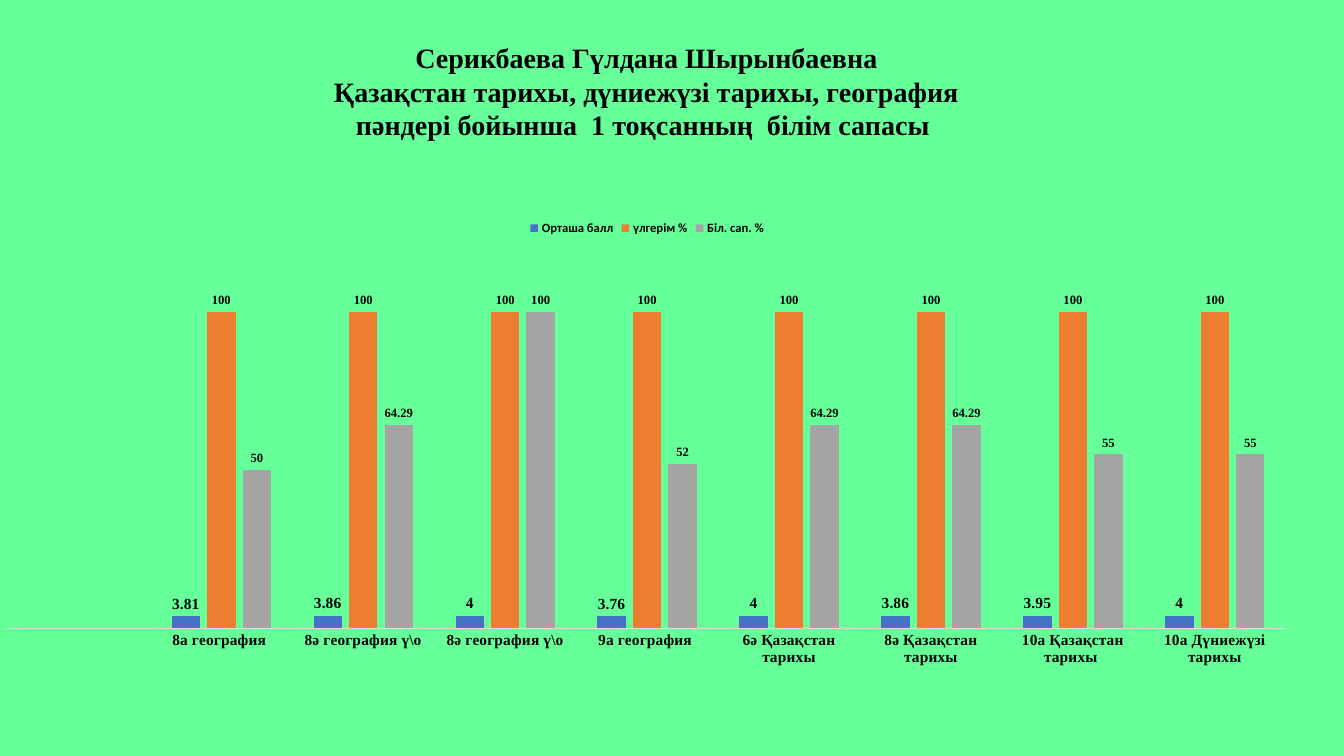
from pptx import Presentation
from pptx import util as u
from pptx.chart.data import CategoryChartData
from pptx.dml.color import RGBColor
from pptx.enum import chart as charts, text

CATEGORIES = ["", "8а география ", "8ә география ү\\о", "8ә география ү\\о",
              "9а география ", "6ә Қазақстан тарихы", "8ә Қазақстан тарихы",
              "10а Қазақстан тарихы ", "10а Дүниежүзі тарихы"]

# name, colour, label size, values
SERIES = [
    ("Орташа балл", "4472C4", 11,
     [None, 3.81, 3.86, 4, 3.76, 4, 3.86, 3.95, 4]),
    ("үлгерім %", "ED7D31", 9, [None] + [100] * 8),
    ("Біл. сап. %", "A5A5A5", 9,
     [None, 50, 64.29, 100, 52, 64.29, 64.29, 55, 55]),
]

TITLE = ["Серикбаева Гүлдана Шырынбаевна",
         "Қазақстан тарихы, дүниежүзі тарихы, география пәндері бойынша"
         "  1 тоқсанның  білім сапасы "]


def color(hex_value):
    return RGBColor.from_string(hex_value)


def apply(target, values):
    """Set each attribute named in the dict on the target."""
    for name, value in values.items():
        setattr(target, name, value)


class QualitySlide:
    INK = "000000"
    SERIF = "Times New Roman"
    SANS = "Calibri"

    def __init__(self, presentation, background):
        self.width = presentation.slide_width
        self.height = presentation.slide_height
        self.slide = presentation.slides.add_slide(presentation.slide_layouts[6])
        fill = self.slide.background.fill
        fill.solid()
        fill.fore_color.rgb = color(background)

    def box(self, left, top, width, height):
        """Turn shares of the slide's size into lengths."""
        return (int(left * self.width), int(top * self.height),
                int(width * self.width), int(height * self.height))

    def style(self, font, size, name=SERIF, bold=True):
        apply(font, {"size": u.Pt(size), "name": name, "bold": bold})
        font.color.rgb = color(self.INK)

    def title(self, lines, area, size):
        frame = self.slide.shapes.add_textbox(*self.box(*area)).text_frame
        apply(frame, {"word_wrap": True,
                      "auto_size": text.MSO_AUTO_SIZE.SHAPE_TO_FIT_TEXT})
        frame.text = "\n".join(lines)
        for paragraph in frame.paragraphs:
            paragraph.alignment = text.PP_ALIGN.CENTER
            self.style(paragraph.runs[0].font, size)

    def column_chart(self, categories, series_rows, area):
        data = CategoryChartData()
        data.categories = categories
        for name, _, _, values in series_rows:
            data.add_series(name, values)
        chart = self.slide.shapes.add_chart(
            charts.XL_CHART_TYPE.COLUMN_CLUSTERED, *self.box(*area), data).chart
        apply(chart, {"has_title": False, "has_legend": True})
        self.style(chart.font, 10, self.SANS, bold=False)
        apply(chart.legend, {"position": charts.XL_LEGEND_POSITION.TOP,
                             "include_in_layout": False})
        self.style(chart.legend.font, 9, self.SANS)
        self.axes(chart)

        plot = chart.plots[0]
        apply(plot, {"gap_width": 150, "overlap": -25,
                     "vary_by_categories": False})
        for series, (_, fill_color, label_size, _) in zip(plot.series, series_rows):
            series.format.fill.solid()
            series.format.fill.fore_color.rgb = color(fill_color)
            labels = series.data_labels
            apply(labels, {"show_value": True,
                           "position": charts.XL_LABEL_POSITION.OUTSIDE_END})
            self.style(labels.font, label_size)

    def axes(self, chart):
        apply(chart.value_axis, {"visible": False, "has_major_gridlines": False,
                                 "minimum_scale": 0, "maximum_scale": 120})
        axis = chart.category_axis
        apply(axis, {"major_tick_mark": charts.XL_TICK_MARK.NONE,
                     "minor_tick_mark": charts.XL_TICK_MARK.NONE})
        self.style(axis.tick_labels.font, 11)
        axis.format.line.width = u.Pt(0.75)
        axis.format.line.color.rgb = color("D9D9D9")


def main():
    presentation = Presentation()
    apply(presentation, {"slide_width": u.Inches(13.33),
                         "slide_height": u.Inches(7.5)})
    slide = QualitySlide(presentation, "66FF99")
    slide.column_chart(CATEGORIES, SERIES, (-0.0135, 0.277, 0.99, 0.616))
    slide.title(TITLE, (0.231, 0.047, 0.5, 0.148), 20)
    presentation.save("out.pptx")


if __name__ == "__main__":
    main()
